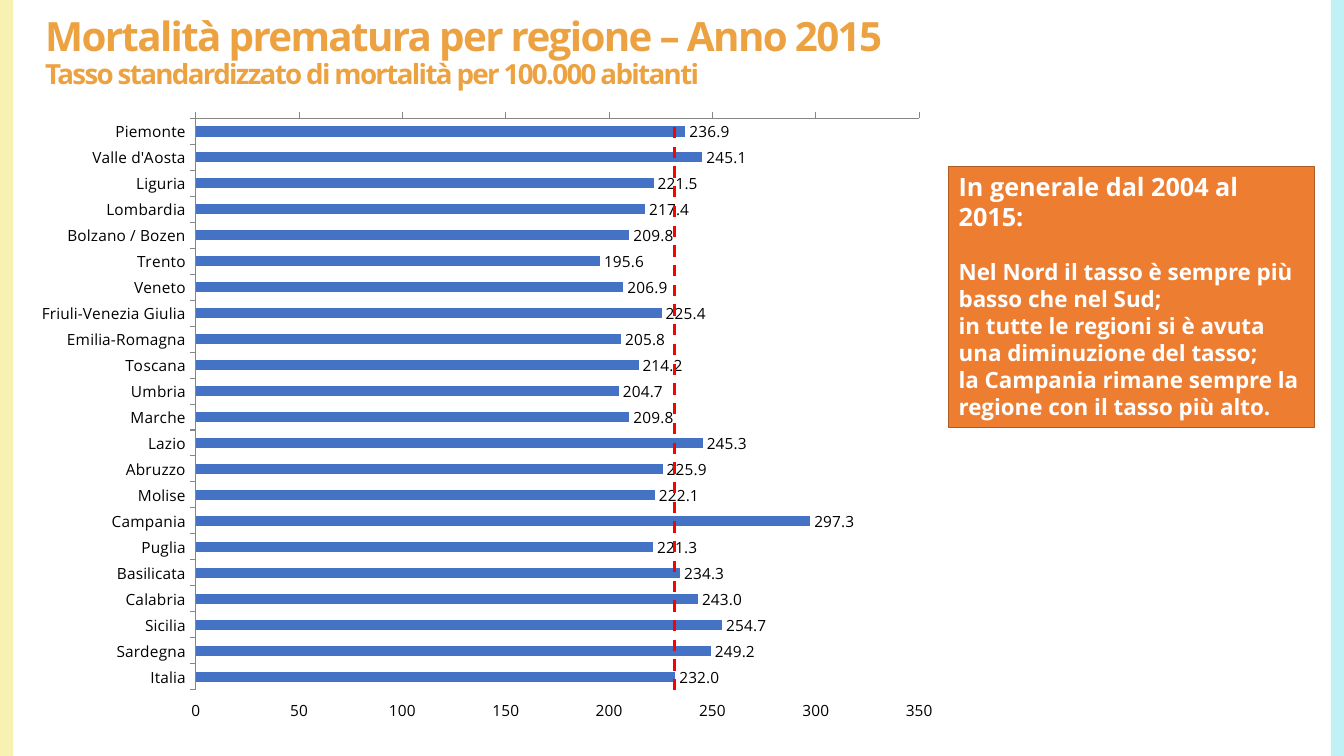
import pptx
import pptx.util
import pptx.dml.color
import pptx.chart.data
import pptx.enum.chart
import pptx.enum.dml
import pptx.enum.shapes
import pptx.enum.text
from lxml import etree

Inches = pptx.util.Inches
Pt = pptx.util.Pt
FONT = "Open Sans"
RATES = {
    "Piemonte": 236.9, "Valle d'Aosta": 245.1, "Liguria": 221.5,
    "Lombardia": 217.4, "Bolzano / Bozen": 209.8, "Trento": 195.6,
    "Veneto": 206.9, "Friuli-Venezia Giulia": 225.4,
    "Emilia-Romagna": 205.8, "Toscana": 214.2, "Umbria": 204.7,
    "Marche": 209.8, "Lazio": 245.3, "Abruzzo": 225.9, "Molise": 222.1,
    "Campania": 297.3, "Puglia": 221.3, "Basilicata": 234.3,
    "Calabria": 243.0, "Sicilia": 254.7, "Sardegna": 249.2,
    "Italia": 232.0,
}
NOTES = [
    ("In generale dal 2004 al 2015:", 18, 0),
    ("Nel Nord il tasso è sempre più basso che nel Sud;", 16, 19),
    ("in tutte le regioni si è avuta una diminuzione del tasso;", 16, 0),
    ("la Campania rimane sempre la regione con il tasso più alto.", 16, 0),
]


def color(code):
    return pptx.dml.color.RGBColor.from_string(code)


def style(font, code, size=None, bold=None):
    font.name = FONT
    font.color.rgb = color(code)
    if size:
        font.size = Pt(size)
    if bold is not None:
        font.bold = bold


def add_box(slide, place, fill, edge=None):
    kind = pptx.enum.shapes.MSO_SHAPE.RECTANGLE
    box = slide.shapes.add_shape(kind, *map(Inches, place))
    box.shadow.inherit = False
    box.fill.solid()
    box.fill.fore_color.rgb = color(fill)
    if edge:
        box.line.color.rgb = color(edge)
        box.line.width = Pt(1)
    else:
        box.line.fill.background()
    return box


def add_title(slide, lines):
    place = map(Inches, (0.35, 0.15, 11.8, 0.77))
    frame = slide.shapes.add_textbox(*place).text_frame
    frame.word_wrap = True
    frame.vertical_anchor = pptx.enum.text.MSO_ANCHOR.MIDDLE
    para = frame.paragraphs[0]
    para.line_spacing = 0.9
    style(para.font, "EDA242", bold=True)
    for index, (text, size) in enumerate(lines):
        if index:
            para.add_line_break()
        run = para.add_run()
        run.text = text
        run.font.size = Pt(size)
        run.font._element.set("spc", "-120")


def add_notes(slide, notes):
    box = add_box(slide, (9.41, 1.65, 3.63, 2.59), "ED7D31", "AF5C24")
    frame = box.text_frame
    frame.word_wrap = True
    frame.auto_size = pptx.enum.text.MSO_AUTO_SIZE.SHAPE_TO_FIT_TEXT
    frame.vertical_anchor = pptx.enum.text.MSO_ANCHOR.TOP
    for index, (text, size, gap) in enumerate(notes):
        para = frame.add_paragraph() if index else frame.paragraphs[0]
        para.text = text
        para.alignment = pptx.enum.text.PP_ALIGN.LEFT
        if gap:
            para.space_before = Pt(gap)
        style(para.font, "FFFFFF", size, True)


def set_plot(chart, **area):
    plot = chart._chartSpace.chart.plotArea
    tag = pptx.oxml.ns.qn
    for old in plot.findall(tag("c:layout")):
        plot.remove(old)
    layout = etree.Element(tag("c:layout"))
    manual = etree.SubElement(layout, tag("c:manualLayout"))
    modes = {"layoutTarget": "inner", "xMode": "edge", "yMode": "edge"}
    for name, value in {**modes, **area}.items():
        etree.SubElement(manual, tag("c:" + name)).set("val", str(value))
    plot.insert(0, layout)


def set_axis(axis):
    axis.has_major_gridlines = False
    axis.major_tick_mark = pptx.enum.chart.XL_TICK_MARK.OUTSIDE
    axis.minor_tick_mark = pptx.enum.chart.XL_TICK_MARK.NONE
    axis.format.line.color.rgb = color("868686")
    axis.format.line.width = Pt(0.75)
    style(axis.tick_labels.font, "000000", 11, False)


def add_bars(slide, rates):
    data = pptx.chart.data.CategoryChartData(number_format="0.0")
    data.categories = list(rates)
    data.add_series("Series 1", list(rates.values()))
    kind = pptx.enum.chart.XL_CHART_TYPE.BAR_CLUSTERED
    place = map(Inches, (0.24, 1.05, 9.2, 6.23))
    chart = slide.shapes.add_chart(kind, *place, data).chart
    chart.has_legend = False
    chart.has_title = False
    style(chart.font, "000000", 11)
    set_plot(chart, x=0.185, y=0.02, w=0.78, h=0.91)

    set_axis(chart.category_axis)
    chart.category_axis.reverse_order = True
    scale = chart.value_axis
    set_axis(scale)
    scale.minimum_scale = 0
    scale.maximum_scale = 350
    scale.major_unit = 50
    scale.tick_label_position = pptx.enum.chart.XL_TICK_LABEL_POSITION.HIGH
    scale.tick_labels.number_format = "0"
    scale.tick_labels.number_format_is_linked = False

    plot = chart.plots[0]
    plot.gap_width = 150
    plot.vary_by_categories = False
    fill = plot.series[0].format.fill
    fill.solid()
    fill.fore_color.rgb = color("4472C4")
    plot.has_data_labels = True
    labels = plot.data_labels
    labels.show_value = True
    labels.number_format = "0.0"
    labels.number_format_is_linked = False
    labels.position = pptx.enum.chart.XL_LABEL_POSITION.OUTSIDE_END
    style(labels.font, "000000", 11)


def add_mean(slide):
    kind = pptx.enum.shapes.MSO_CONNECTOR.STRAIGHT
    ends = map(Inches, (6.69, 6.85, 6.69, 1.25))
    mean = slide.shapes.add_connector(kind, *ends)
    mean.line.color.rgb = color("FF0000")
    mean.line.width = Pt(2)
    mean.line.dash_style = pptx.enum.dml.MSO_LINE.DASH
    props = mean._element.spPr
    etree.SubElement(props, pptx.oxml.ns.qn("a:effectLst"))


def main():
    deck = pptx.Presentation()
    deck.slide_width = Inches(13.33)
    deck.slide_height = Inches(7.5)
    slide = deck.slides.add_slide(deck.slide_layouts[6])
    add_box(slide, (0, 0, 0.13, 7.5), "F7F2B1")
    add_box(slide, (13.2, 0, 0.13, 7.5), "C0F1F4")
    add_title(slide, [
        ("Mortalità prematura per regione – Anno 2015", 28.8),
        ("Tasso standardizzato di mortalità per 100.000 abitanti", 19.8),
    ])
    add_notes(slide, NOTES)
    add_bars(slide, RATES)
    add_mean(slide)
    deck.save("out.pptx")


if __name__ == "__main__":
    main()
